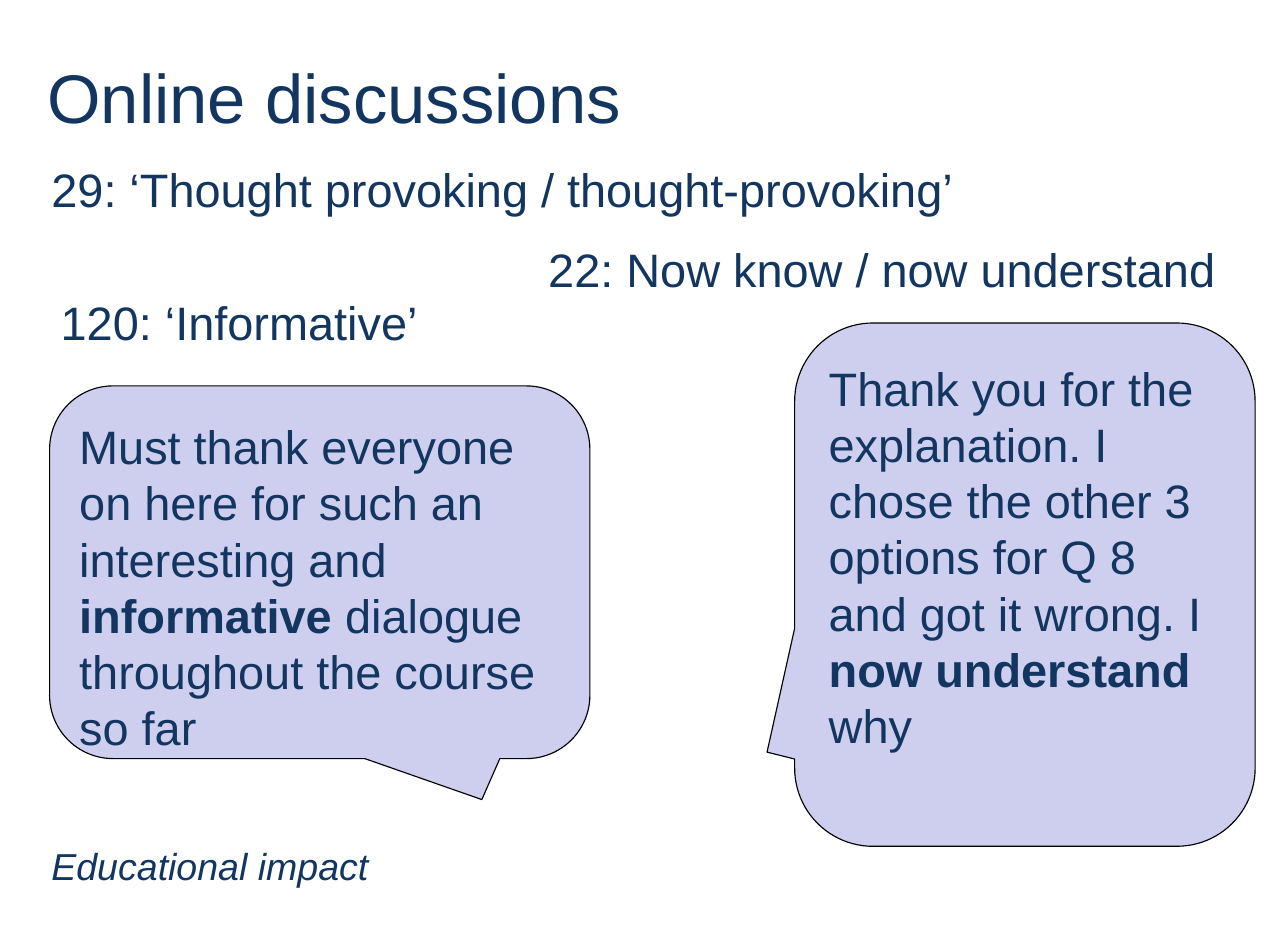
from pptx import Presentation
from pptx.dml.color import RGBColor
from pptx.enum import shapes, text
from pptx.util import Cm, Pt

NAVY = RGBColor(0x13, 0x36, 0x60)
LILAC = RGBColor(0xCE, 0xCE, 0xEF)
BLACK = RGBColor(0, 0, 0)


def add_run(p, words, size, bold=False, italic=False):
    r = p.add_run()
    r.text = words
    r.font.name = "Arial"
    r.font.size = Pt(size)
    r.font.bold = bold
    r.font.italic = italic
    r.font.color.rgb = NAVY


prs = Presentation()
prs.slide_width, prs.slide_height = Cm(29.06), Cm(21.01)
s = prs.slides.add_slide(prs.slide_layouts[6])

# Title
title = s.shapes.add_textbox(Cm(0.76), Cm(1.12), Cm(23.29), Cm(2.11))
tf = title.text_frame
tf.word_wrap = True
tf.auto_size = text.MSO_AUTO_SIZE.SHAPE_TO_FIT_TEXT
tf.vertical_anchor = text.MSO_ANCHOR.MIDDLE
tf.margin_left, tf.margin_right = Cm(0.23), Cm(0.2)
tf.margin_top = tf.margin_bottom = Cm(0.1)
p = tf.paragraphs[0]
pPr = p._p.get_or_add_pPr()
pPr.set("marL", str(Cm(0.13)))
pPr.set("indent", str(Cm(-0.05)))
add_run(p, "Online discussions", 44)

# Comment counts and footer: left, top, width, height, size, italic, words
labels = [
    (0.91, 3.5, 21.03, 1.55, 30, False, "29: ‘Thought provoking / thought-provoking’"),
    (12.12, 5.31, 15.72, 1.55, 30, False, "22: Now know / now understand"),
    (1.12, 6.5, 8.61, 1.55, 30, False, "120: ‘Informative’"),
    (0.91, 18.9, 8, 1.27, 24, True, "Educational impact"),
]
for left, top, width, height, size, italic, words in labels:
    label = s.shapes.add_textbox(Cm(left), Cm(top), Cm(width), Cm(height))
    tf = label.text_frame
    tf.word_wrap = False
    tf.auto_size = text.MSO_AUTO_SIZE.SHAPE_TO_FIT_TEXT
    add_run(tf.paragraphs[0], words, size, italic=italic)

# Quote callouts: box, pointer tip, (words, bold) runs
quotes = [
    ((17.93, 7.29, 10.39, 11.81), (-0.56, 0.32), [
        ("Thank you for the explanation. I chose the other 3 options for Q 8 "
         "and got it wrong. I ", False),
        ("now understand ", True),
        ("why", False)]),
    ((1.12, 8.71, 12.19, 8.41), (0.3, 0.61), [
        ("Must thank everyone on here for such an interesting and", False),
        (" informative", True),
        (" dialogue throughout the course so far", False)]),
]
for box, tip, runs in quotes:
    sp = s.shapes.add_shape(shapes.MSO_SHAPE.ROUNDED_RECTANGULAR_CALLOUT,
                            *[Cm(v) for v in box])
    sp.adjustments[0], sp.adjustments[1] = tip
    sp.adjustments[2] = 0.17
    sp.shadow.inherit = False
    sp.fill.solid()
    sp.fill.fore_color.rgb = LILAC
    sp.line.color.rgb = BLACK
    sp.line.width = Pt(0.75)
    tf = sp.text_frame
    tf.word_wrap = True
    tf.vertical_anchor = text.MSO_ANCHOR.TOP
    tf.margin_left = tf.margin_right = Cm(0.25)
    tf.margin_top = tf.margin_bottom = Cm(0.3)
    p = tf.paragraphs[0]
    p.alignment = text.PP_ALIGN.LEFT
    for words, bold in runs:
        add_run(p, words, 30, bold=bold)

prs.save("out.pptx")
